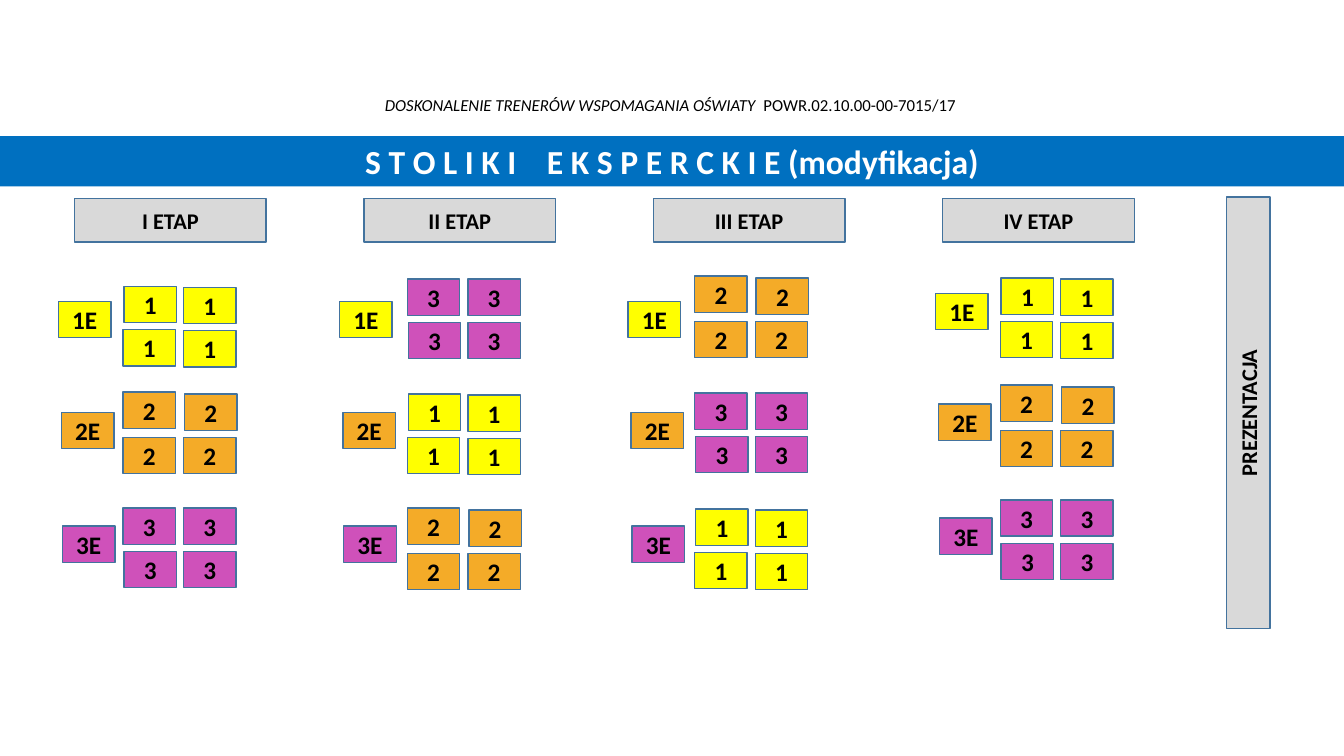
from pptx import Presentation
from pptx.dml.color import RGBColor
from pptx.enum.shapes import MSO_SHAPE as Shape
from pptx.enum.text import MSO_ANCHOR as Anchor, MSO_AUTO_SIZE as AutoSize, PP_ALIGN as Align
from pptx.util import Inches, Pt

# Runs are (text, italic, letter spacing in points)
PROJECT = [("DOSKONALENIE TRENERÓW WSPOMAGANIA OŚWIATY", True, 0), (" ", True, 2.7),
           ("POWR.02.10.00-00-7015/17", False, 0)]
TITLE = [("S T O L I K I", False, 0), (" ", False, 16.3),
         ("E K S P E R C K I E (modyfikacja)", False, 0)]
PRESENTATION_LABEL = "PREZENTACJA"
# Each stage: heading, group seated at each expert's table
STAGES = [("I ETAP", (1, 2, 3)), ("II ETAP", (3, 1, 2)),
          ("III ETAP", (2, 3, 1)), ("IV ETAP", (1, 2, 3))]

COLORS = {"band": "0070C0", "panel": "D9D9D9", "outline": "43739E",
          "text": "000000", "title": "FFFFFF",
          1: "FFFF00", 2: "F4AB28", 3: "CF51BA"}
FONT = "Calibri"
WIDTH, HEIGHT = 13.33, 7.5
HEADING_LEFT, HEADING_PITCH, HEADING_TOP = 0.74, 2.87, 1.97
HEADING_SIZE = (1.9, 0.43)
TILE_SIZE = (0.52, 0.36)
EXPERT_LEFTS = (0.58, 3.37, 6.23, 9.28)
EXPERT_SHIFTS = (0, 0.03, 0.04)
EXPERT_TOPS = (2.99, 4.09, 5.22)
LAST_STAGE_LIFT = 0.08
SEAT_LEFTS = (1.22, 4.04, 6.89, 9.92)
SEAT_TOPS = ((2.84, 3.89, 5.04), (2.77, 3.91, 5.04),
             (2.74, 3.9, 5.05), (2.76, 3.82, 4.96))
# Offsets of the four seats within each group
SEATS = {1: ((0.01, 0), (0.6, 0.01), (0, 0.43), (0.6, 0.44)),
         2: ((0, 0), (0.61, 0.02), (0, 0.45), (0.6, 0.45)),
         3: ((0, 0), (0.6, 0), (0.01, 0.43), (0.6, 0.43))}


def write(shape, runs, size, color="text", bold=False):
    frame = shape.text_frame
    frame.word_wrap = True
    frame.auto_size = AutoSize.NONE
    frame.vertical_anchor = Anchor.MIDDLE
    frame.margin_top = frame.margin_bottom = Inches(0.05)
    paragraph = frame.paragraphs[0]
    paragraph.alignment = Align.CENTER
    for text, italic, spacing in runs:
        run = paragraph.add_run()
        run.text = text
        font = run.font
        font.name, font.size, font.bold, font.italic = FONT, Pt(size), bold, italic
        font.color.rgb = RGBColor.from_string(COLORS[color])
        if spacing:
            run._r.get_or_add_rPr().set("spc", str(round(spacing * 100)))


def fill(shape, color):
    shape.fill.solid()
    shape.fill.fore_color.rgb = RGBColor.from_string(COLORS[color])


def add_box(slide, text, left, top, box_size, color, size=18):
    shape = slide.shapes.add_shape(Shape.RECTANGLE, Inches(left), Inches(top),
                                   *map(Inches, box_size))
    shape.shadow.inherit = False
    fill(shape, color)
    shape.line.color.rgb = RGBColor.from_string(COLORS["outline"])
    shape.line.width = Pt(1)
    write(shape, [(text, False, 0)], size, bold=True)
    return shape


def add_stage(slide, column, heading, groups):
    add_box(slide, heading, HEADING_LEFT + column * HEADING_PITCH, HEADING_TOP,
            HEADING_SIZE, "panel", size=16)
    lift = LAST_STAGE_LIFT if column == len(STAGES) - 1 else 0
    for row, group in enumerate(groups):
        add_box(slide, f"{row + 1}E", EXPERT_LEFTS[column] + EXPERT_SHIFTS[row],
                EXPERT_TOPS[row] - lift, TILE_SIZE, row + 1)
        for right, down in SEATS[group]:
            add_box(slide, str(group), SEAT_LEFTS[column] + right,
                    SEAT_TOPS[column][row] + down, TILE_SIZE, group)


def main():
    presentation = Presentation()
    presentation.slide_width, presentation.slide_height = Inches(WIDTH), Inches(HEIGHT)
    slide = presentation.slides.add_slide(presentation.slide_layouts[5])

    title = slide.shapes.title
    title.left, title.top = 0, Inches(1.35)
    title.width, title.height = Inches(WIDTH), Inches(0.5)
    fill(title, "band")
    write(title, TITLE, 24, color="title", bold=True)

    project = slide.shapes.add_textbox(Inches(0.92), Inches(0.89), Inches(11.46), Inches(0.3))
    write(project, PROJECT, 12)

    for column, (heading, groups) in enumerate(STAGES):
        add_stage(slide, column, heading, groups)

    label = add_box(slide, PRESENTATION_LABEL, 10.24, 3.88, (4.28, 0.43), "panel", size=16)
    label.rotation = 270
    presentation.save("out.pptx")


if __name__ == "__main__":
    main()
